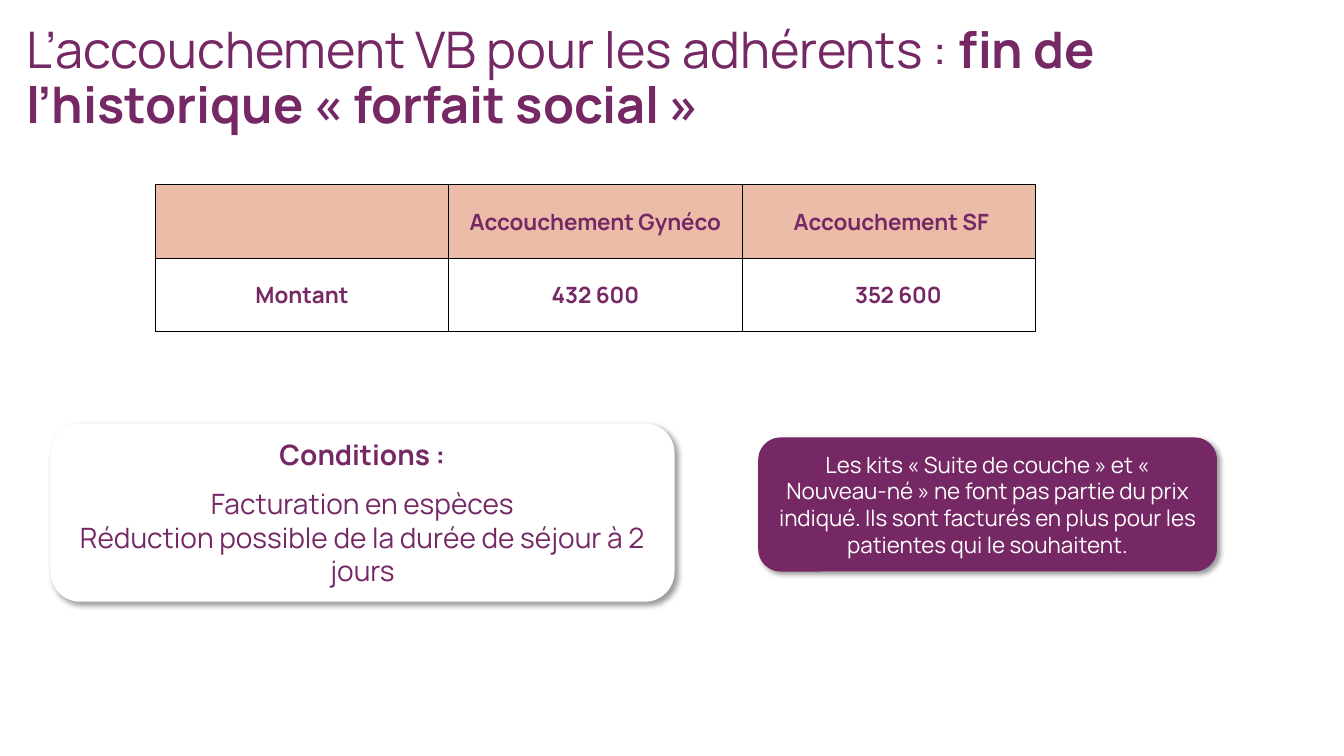
from lxml import etree
from pptx import Presentation
from pptx import util as u
from pptx.dml.color import RGBColor
from pptx.enum import shapes, text
from pptx.oxml import ns

COLORS = {"plum": "752864", "peach": "EBBDA9", "white": "FFFFFF", "black": "000000"}
FONT = "Manrope"


def color(name):
    return RGBColor.from_string(COLORS[name])


def add_span(para, words, size, ink="plum", bold=False):
    span = para.add_run()
    span.text = words
    span.font.name = FONT
    span.font.size = u.Pt(size)
    span.font.bold = bold
    span.font.color.rgb = color(ink)


deck = Presentation()
deck.slide_width = u.Inches(13.33)
deck.slide_height = u.Inches(7.5)
page = deck.slides.add_slide(deck.slide_layouts[6])

# Title
title = page.shapes.add_textbox(u.Inches(0.16), u.Inches(0.2), u.Inches(11.5), u.Inches(0.8))
title.text_frame.word_wrap = True
para = title.text_frame.paragraphs[0]
para.line_spacing = 0.9
add_span(para, "L’accouchement VB pour les adhérents : ", 36)
add_span(para, "fin de l’historique « forfait social »", 36, bold=True)

# Price table
rows = [["", "Accouchement Gynéco", "Accouchement SF"],
        ["Montant", "432 600", "352 600"]]
left_insets = {"Accouchement SF": 0.06, "352 600": 0.2}
table = page.shapes.add_table(2, 3, u.Inches(1.54), u.Inches(1.83),
                              u.Inches(8.73), u.Inches(1.46)).table
for r, row in enumerate(rows):
    for c, words in enumerate(row):
        cell = table.cell(r, c)
        cell.vertical_anchor = text.MSO_ANCHOR.MIDDLE
        cell.margin_left = u.Inches(left_insets.get(words, 0.01))
        cell.margin_right = cell.margin_top = u.Inches(0.01)
        cell.margin_bottom = 0
        para = cell.text_frame.paragraphs[0]
        para.alignment = text.PP_ALIGN.CENTER
        if words:
            add_span(para, words, 16, bold=True)
        # Borders come before the fill in the cell properties
        props = cell._tc.get_or_add_tcPr()
        for side in ("lnL", "lnR", "lnT", "lnB"):
            line = etree.SubElement(props, ns.qn("a:" + side), w=str(u.Pt(0.75)))
            paint = etree.SubElement(line, ns.qn("a:solidFill"))
            etree.SubElement(paint, ns.qn("a:srgbClr"), val=COLORS["black"])
        cell.fill.solid()
        cell.fill.fore_color.rgb = color("peach" if r == 0 else "white")

# Rounded boxes: place, fill, ink, size, then (words, bold, space before)
boxes = [
    ((0.5, 4.2, 6.19, 1.77), "white", "plum", 20,
     [("Conditions :", True, 0),
      ("Facturation en espèces", False, 11),
      ("Réduction possible de la durée de séjour à 2 jours", False, 0)]),
    ((7.52, 4.34, 4.55, 1.33), "plum", "white", 16,
     [("Les kits « Suite de couche » et « Nouveau-né » ne font pas partie du prix "
       "indiqué. Ils sont facturés en plus pour les patientes qui le souhaitent.", False, 0)]),
]
for place, fill, ink, size, lines in boxes:
    box = page.shapes.add_shape(shapes.MSO_SHAPE.ROUNDED_RECTANGLE, *map(u.Inches, place))
    box.fill.solid()
    box.fill.fore_color.rgb = color(fill)
    box.line.fill.background()

    # Soft shadow towards the lower right
    box.shadow.inherit = False
    effects = box._element.spPr.find(ns.qn("a:effectLst"))
    shadow = etree.SubElement(effects, ns.qn("a:outerShdw"), blurRad=str(u.Pt(4)),
                              dist=str(u.Pt(3)), dir="2700000", algn="tl", rotWithShape="0")
    tint = etree.SubElement(shadow, ns.qn("a:srgbClr"), val=COLORS["black"])
    etree.SubElement(tint, ns.qn("a:alpha"), val="40000")

    frame = box.text_frame
    frame.word_wrap = True
    frame.vertical_anchor = text.MSO_ANCHOR.MIDDLE
    for i, (words, bold, gap) in enumerate(lines):
        para = frame.add_paragraph() if i else frame.paragraphs[0]
        para.alignment = text.PP_ALIGN.CENTER
        para.space_before = u.Pt(gap)
        add_span(para, words, size, ink, bold)

deck.save("out.pptx")
